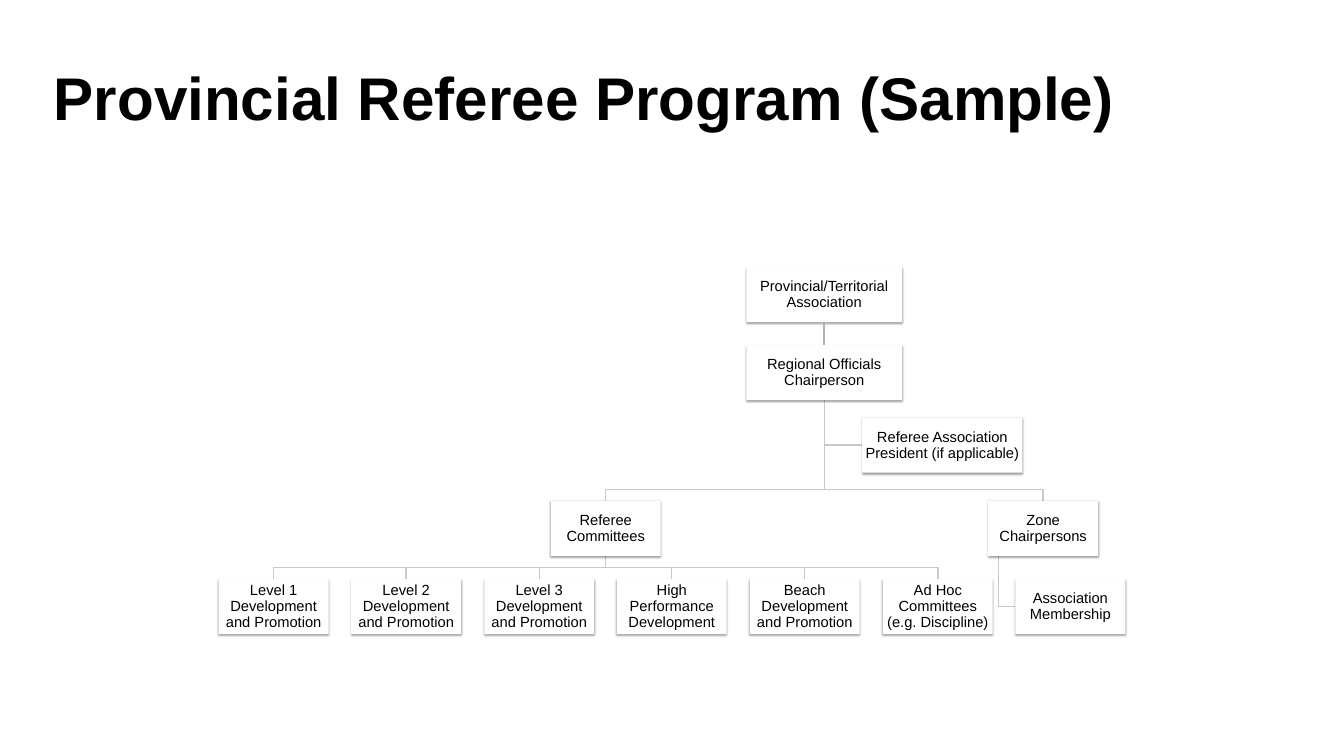
from dataclasses import dataclass

import lxml.etree
import pptx
import pptx.dml.color
import pptx.enum.shapes
import pptx.enum.text
import pptx.oxml
import pptx.oxml.ns
import pptx.util

SCALE = 9144  # EMU in one px, 100 px to the inch
HIGH = 109
DROP = 23  # gap between a cross bar and the boxes under it
ALIGN = pptx.enum.text.PP_ALIGN
MIDDLE = pptx.enum.text.MSO_ANCHOR.MIDDLE
SIDES = ("margin_left", "margin_top", "margin_right", "margin_bottom")
SHADOW = (
    f'<a:effectLst {pptx.oxml.ns.nsdecls("a")}>'
    '<a:outerShdw blurRad="39370" dist="20320" dir="5400000" rotWithShape="0">'
    '<a:srgbClr val="000000"><a:alpha val="38000"/></a:srgbClr>'
    '</a:outerShdw></a:effectLst>'
)


@dataclass(frozen=True)
class Box:
    text: str
    left: int
    top: int
    width: int = 218

    @property
    def mid(self) -> int:
        return self.left + (self.width + 1) // 2

    @property
    def base(self) -> int:
        return self.top + HIGH


def px(size: int) -> int:
    return pptx.util.Emu(size * SCALE)


def color(code: str):
    return pptx.dml.color.RGBColor.from_string(code)


def format_all(item, values: dict) -> None:
    for name, value in values.items():
        setattr(item, name, value)


def write(frame, text: str, size: int, inset: int, align, space: float, bold: bool) -> None:
    format_all(frame, {"word_wrap": True, "vertical_anchor": MIDDLE})
    format_all(frame, {side: px(inset) for side in SIDES})
    line = frame.paragraphs[0]
    line.text = text
    format_all(line, {"alignment": align, "line_spacing": space})
    for run in line.runs:
        format_all(run.font, {"name": "Arial", "size": pptx.util.Pt(size), "bold": bold})
        run.font.color.rgb = color("000000")


def paint_line(line, code: str) -> None:
    line.color.rgb = color(code)
    line.width = pptx.util.Pt(2)


def draw_box(slide, box: Box):
    shape = slide.shapes.add_shape(
        pptx.enum.shapes.MSO_SHAPE.RECTANGLE,
        px(box.left), px(box.top), px(box.width), px(HIGH),
    )
    shape.fill.solid()
    shape.fill.fore_color.rgb = color("FFFFFF")
    shape.line.fill.background()
    shape._element.spPr.append(pptx.oxml.parse_xml(SHADOW))
    write(shape.text_frame, box.text, 21, 1, ALIGN.CENTER, 0.9, False)
    return shape


def draw_path(slide, points: list[tuple[int, int]]) -> None:
    build = slide.shapes.build_freeform(*points[0], scale=SCALE)
    build.add_line_segments(points[1:], close=False)
    shape = build.convert_to_shape()
    shape.fill.background()
    shape.shadow.inherit = False
    paint_line(shape.line, "C9C9C9")


def draw_branch(slide, top: Box, child: Box) -> None:
    """Run down from a box, across, and down to the top of its child."""
    bar = child.top - DROP
    draw_path(slide, [(top.mid, top.base), (top.mid, bar), (child.mid, bar), (child.mid, child.top)])


def draw_arm(slide, start: int, top: Box, side: Box) -> None:
    """Run down from a box and across to the left side of another."""
    level = side.top + HIGH // 2
    draw_path(slide, [(start, top.base), (start, level), (side.left, level)])


def draw_link(slide, upper, lower) -> None:
    link = slide.shapes.add_connector(pptx.enum.shapes.MSO_CONNECTOR.STRAIGHT, 0, 0, 0, 0)
    link.begin_connect(upper, 2)
    link.end_connect(lower, 0)
    paint_line(link.line, "B1B1B1")
    lxml.etree.SubElement(link._element.spPr, pptx.oxml.ns.qn("a:effectLst"))


def main() -> None:
    deck = pptx.Presentation()
    format_all(deck, {"slide_width": px(2667), "slide_height": px(1500)})
    slide = deck.slides.add_slide(deck.slide_layouts[5])
    title = slide.shapes.title
    format_all(title, {"left": px(101), "top": px(67), "width": px(2297), "height": px(250)})
    write(title.text_frame, "Provincial Referee Program (Sample)", 86, 6, ALIGN.LEFT, 1.0, True)

    root = Box("Provincial/Territorial Association", 1481, 530, 309)
    chair = Box("Regional Officials Chairperson", 1481, 685, 309)
    aide = Box("Referee Association President (if applicable)", 1711, 829, 318)
    group = Box("Referee Committees", 1093, 994)
    zone = Box("Zone Chairpersons", 1961, 994)
    names = (
        "Level 1 Development and Promotion",
        "Level 2 Development and Promotion",
        "Level 3 Development and Promotion",
        "High Performance Development",
        "Beach Development and Promotion",
        "Ad Hoc Committees\v(e.g. Discipline)",
        "Association Membership",
    )
    row = [Box(name, 434 + 1318 * i // 5, 1149) for i, name in enumerate(names)]
    *teams, members = row

    draw_arm(slide, chair.mid, chair, aide)
    draw_arm(slide, zone.left + 21, zone, members)
    for child in (zone, group):
        draw_branch(slide, chair, child)
    for team in teams:
        draw_branch(slide, group, team)

    upper, lower = [draw_box(slide, box) for box in (root, chair)]
    draw_link(slide, upper, lower)
    for box in (group, *teams, zone, members, aide):
        draw_box(slide, box)
    deck.save("out.pptx")


if __name__ == "__main__":
    main()
